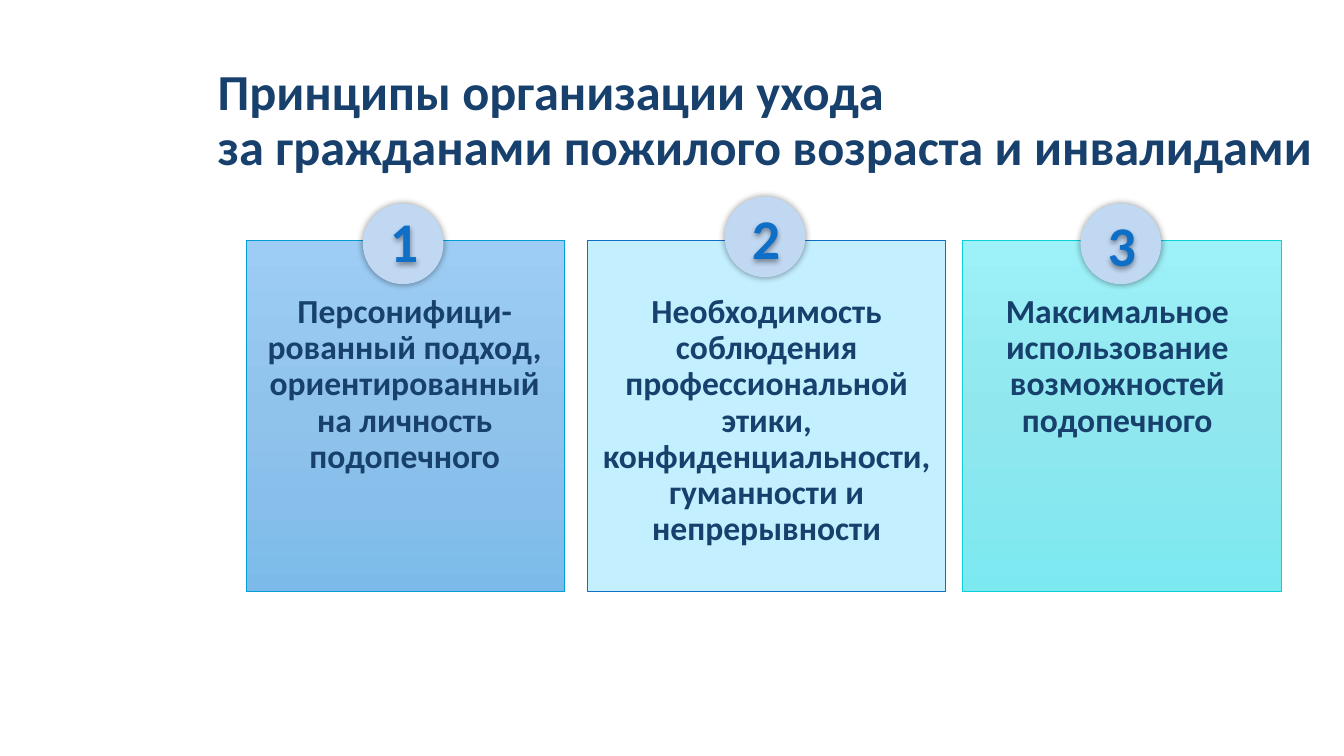
"""Builds a slide with three numbered principles of care."""
import copy

import pptx
import pptx.dml.color
import pptx.enum.shapes
import pptx.enum.text
import pptx.oxml
import pptx.oxml.ns
import pptx.util

Pt = pptx.util.Pt
RGBColor = pptx.dml.color.RGBColor
qn = pptx.oxml.ns.qn
MSO_SHAPE = pptx.enum.shapes.MSO_SHAPE
PP_ALIGN = pptx.enum.text.PP_ALIGN
MSO_ANCHOR = pptx.enum.text.MSO_ANCHOR
MSO_AUTO_SIZE = pptx.enum.text.MSO_AUTO_SIZE

NAVY = RGBColor(0x17, 0x40, 0x6D)
BLUE = RGBColor(0x0F, 0x6F, 0xC6)
SKY = RGBColor(0x00, 0x9D, 0xD9)
TURQUOISE = RGBColor(0x0B, 0xD0, 0xD9)
BADGE_FILL = RGBColor(0xC1, 0xD8, 0xF2)
BLUE_GRADIENT = [RGBColor(0x9D, 0xCD, 0xF4), RGBColor(0x90, 0xC3, 0xEC), RGBColor(0x7C, 0xBB, 0xE9)]
PALE_BLUE = [RGBColor(0xC4, 0xEF, 0xFF)]
AQUA_GRADIENT = [RGBColor(0x9D, 0xF1, 0xF8), RGBColor(0x90, 0xE7, 0xEE), RGBColor(0x7C, 0xE9, 0xF1)]

CARD_TOP, CARD_HEIGHT = 172, 250.5
BODY_TOP, BODY_HEIGHT = 206.6, 210
BADGE_SIZE = 57.6


def write_text(shape, text, size, color, alignment, line_spacing):
    text_frame = shape.text_frame
    text_frame.word_wrap = True
    text_frame.auto_size = MSO_AUTO_SIZE.NONE
    text_frame.text = text
    for paragraph in text_frame.paragraphs:
        paragraph.alignment = alignment
        paragraph.line_spacing = line_spacing
        paragraph.space_before = Pt(0)
        for run in paragraph.runs:
            run.font.name = "Calibri"
            run.font.size = Pt(size)
            run.font.bold = True
            run.font.color.rgb = color


def add_shadow(shape, blur, distance):
    shape.shadow.inherit = False
    effects = shape._element.spPr.find(qn("a:effectLst"))
    effects.append(pptx.oxml.parse_xml(
        '<a:outerShdw xmlns:a="http://schemas.openxmlformats.org/drawingml/2006/main" '
        f'blurRad="{Pt(blur)}" dist="{Pt(distance)}" dir="5400000" algn="ctr" rotWithShape="0">'
        '<a:srgbClr val="000000"><a:alpha val="40000"/></a:srgbClr></a:outerShdw>'))


presentation = pptx.Presentation()
presentation.slide_width = Pt(960)
presentation.slide_height = Pt(540)
slide = presentation.slides.add_slide(presentation.slide_layouts[5])

title = slide.shapes.title
title.left, title.top, title.width, title.height = Pt(148.3), Pt(34.6), Pt(811.4), Pt(104.4)
write_text(title, "Принципы организации ухода \vза гражданами пожилого возраста и инвалидами",
           36, NAVY, PP_ALIGN.LEFT, 0.9)
title.text_frame.vertical_anchor = MSO_ANCHOR.MIDDLE

principles = [
    (175.7, 227.5, BLUE_GRADIENT, SKY, 178.6, 221, 259.2, 145.4, 144,
     "Персонифици-\nрованный подход, ориентированный на личность подопечного"),
    (419.8, 255.6, PALE_BLUE, BLUE, 419.8, 255.6, 517.7, 140.4, 141.8,
     "Необходимость соблюдения профессиональной этики, конфиденциальности, гуманности и непрерывности"),
    (687.6, 227.5, AQUA_GRADIENT, TURQUOISE, 687.6, 221, 771.8, 145.4, 146.9,
     "Максимальное использование возможностей подопечного"),
]

for number, principle in enumerate(principles, start=1):
    (card_left, card_width, colors, line_color, body_left, body_width,
     badge_left, badge_top, number_top, text) = principle

    card = slide.shapes.add_shape(MSO_SHAPE.RECTANGLE, Pt(card_left), Pt(CARD_TOP),
                                  Pt(card_width), Pt(CARD_HEIGHT))
    card.shadow.inherit = False
    card.line.color.rgb = line_color
    card.line.width = Pt(0.5)
    if len(colors) == 1:
        card.fill.solid()
        card.fill.fore_color.rgb = colors[0]
    else:
        card.fill.gradient()
        card.fill.gradient_angle = 270
        stop_list = card._element.spPr.find(qn("a:gradFill")).find(qn("a:gsLst"))
        stop_list.insert(1, copy.deepcopy(stop_list[0]))
        for stop, color, position in zip(card.fill.gradient_stops, colors, (0, 0.5, 1)):
            stop.color.rgb = color
            stop.position = position

    body = slide.shapes.add_textbox(Pt(body_left), Pt(BODY_TOP), Pt(body_width), Pt(BODY_HEIGHT))
    write_text(body, text, 24, NAVY, PP_ALIGN.CENTER, 0.9)

    badge = slide.shapes.add_shape(MSO_SHAPE.OVAL, Pt(badge_left), Pt(badge_top),
                                   Pt(BADGE_SIZE), Pt(BADGE_SIZE))
    badge.fill.solid()
    badge.fill.fore_color.rgb = BADGE_FILL
    badge.line.fill.background()
    add_shadow(badge, 5, 0)

    label = slide.shapes.add_textbox(Pt(badge_left + 0.7), Pt(number_top), Pt(BADGE_SIZE), Pt(55.7))
    write_text(label, str(number), 40, BLUE, PP_ALIGN.CENTER, 1)
    add_shadow(label, 4, 2)

presentation.save("out.pptx")
